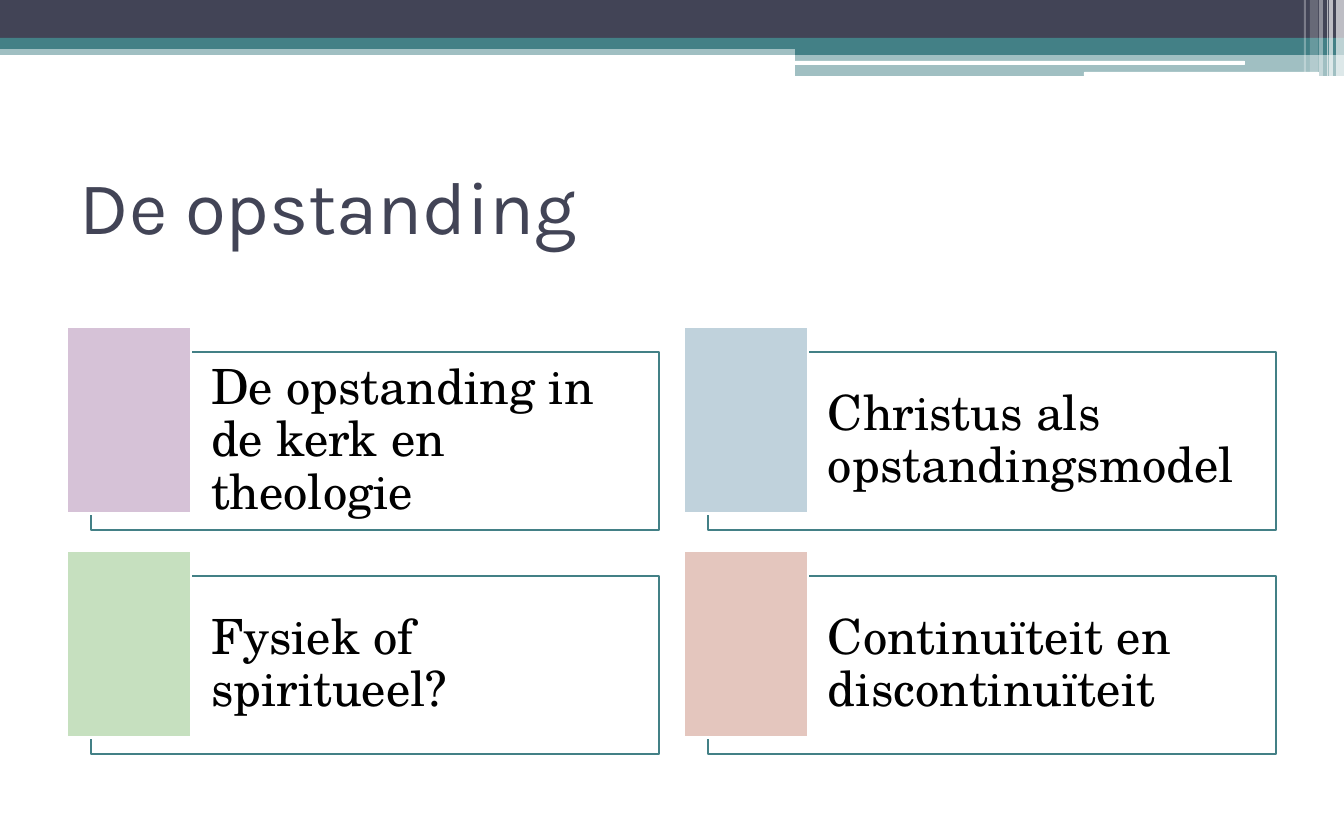
from lxml import etree
from pptx import Presentation
from pptx import util as u
from pptx.dml.color import RGBColor
from pptx.enum import shapes, text
from pptx.oxml.ns import qn

EMU_PER_PX = 914400 / 134.4
WIDTH, HEIGHT = 1344, 840

WHITE = RGBColor(0xFF, 0xFF, 0xFF)
BLACK = RGBColor(0x00, 0x00, 0x00)
NAVY = RGBColor(0x42, 0x44, 0x56)
TEAL = RGBColor(0x43, 0x80, 0x86)
LILAC = RGBColor(0xD6, 0xC2, 0xD7)
BLUE = RGBColor(0xC0, 0xD2, 0xDC)
GREEN = RGBColor(0xC6, 0xE0, 0xBF)
PINK = RGBColor(0xE4, 0xC6, 0xBE)

RECTANGLE = shapes.MSO_SHAPE.RECTANGLE
ROUNDED = shapes.MSO_SHAPE.ROUNDED_RECTANGLE


def px(value):
    return u.Emu(round(value * EMU_PER_PX))


def add_block(slide, box, color, opacity=100, line=None, line_width=0.75, kind=RECTANGLE):
    shape = slide.shapes.add_shape(kind, *map(px, box))
    shape.shadow.inherit = False
    shape.fill.solid()
    shape.fill.fore_color.rgb = color
    if opacity < 100:
        fill_color = shape.fill._xPr.find(qn("a:solidFill"))[0]
        etree.SubElement(fill_color, qn("a:alpha"), val=str(opacity * 1000))
    if line is None:
        shape.line.fill.background()
    else:
        shape.line.color.rgb = line
        shape.line.width = u.Pt(line_width)
    return shape


def write_text(shape, content, font, size, color, insets=(13, 7, 13, 7), line_spacing=1.0):
    frame = shape.text_frame
    frame.word_wrap = True
    frame.vertical_anchor = text.MSO_ANCHOR.MIDDLE
    (frame.margin_left, frame.margin_top,
     frame.margin_right, frame.margin_bottom) = map(px, insets)
    paragraph = frame.paragraphs[0]
    paragraph.alignment = text.PP_ALIGN.LEFT
    paragraph.line_spacing = line_spacing
    run = paragraph.add_run()
    run.text = content
    run.font.name = font
    run.font.size = u.Pt(size)
    run.font.color.rgb = color


def add_header(slide, box):
    left, top, width, height = box
    step = 795  # where the band becomes taller
    # Bands: x, y, width, height, color, opacity
    bands = [
        (0, 44, width, 11, TEAL, 50),
        (0, 0, width, 38, NAVY, 100),
        (0, 38, width, 11, TEAL, 100),
        (step, 44, width - step, 11, TEAL, 100),
        (step, 55, width - step, height - 55, TEAL, 50),
    ]
    # Stripes at the right edge: x, width, height, opacity
    stripes = [(1336, 8, 76, 65), (1329, 4, 76, 65), (1327, 1, 76, 60),
               (1319, 4, 76, 40), (1310, 8, 72, 20), (1304, 2, 72, 30)]
    for x, y, w, h, color, opacity in bands:
        add_block(slide, (left + x, top + y, w, h), color, opacity)
    for x, y, w in [(step, 61, 450), (1084, 72, 235)]:
        add_block(slide, (left + x, top + y, w, 4), WHITE, kind=ROUNDED)
    for x, w, h, opacity in stripes:
        add_block(slide, (left + x, top, w, h), WHITE, opacity)


def add_title(slide, box, content):
    shape = slide.shapes.add_textbox(*map(px, box))
    write_text(shape, content, font="Karla", size=40, color=NAVY)


def add_card(slide, box, content, color):
    left, top, width, height = box
    frame_box = (left + 24, top + 25, width - 24, height - 25)
    frame = add_block(slide, frame_box, WHITE, opacity=40, line=TEAL)
    write_text(frame, content, font="TeX Gyre Schola", size=26, color=BLACK,
               insets=(120, 15, 15, 15), line_spacing=0.9)
    add_block(slide, (left, top, 124, 187), color, line=WHITE, line_width=1.5)


def add_card_grid(slide, box, cards, columns=2, gap_x=25, gap_y=21):
    left, top, width, height = box
    rows = len(cards) // columns
    card_width = (width - gap_x * (columns - 1)) / columns
    card_height = (height - gap_y * (rows - 1)) / rows
    for index, (content, color) in enumerate(cards):
        row, column = divmod(index, columns)
        card_box = (left + column * (card_width + gap_x),
                    top + row * (card_height + gap_y), card_width, card_height)
        add_card(slide, card_box, content, color)


def main():
    presentation = Presentation()
    presentation.slide_width = px(WIDTH)
    presentation.slide_height = px(HEIGHT)
    slide = presentation.slides.add_slide(presentation.slide_layouts[6])

    add_header(slide, (0, 0, WIDTH, 76))
    add_title(slide, (67, 140, 1210, 130), "De opstanding")
    add_card_grid(slide, (67, 327, 1209, 427), [
        ("De opstanding in de kerk en theologie", LILAC),
        ("Christus als opstandingsmodel", BLUE),
        ("Fysiek of spiritueel?", GREEN),
        ("Continuïteit en discontinuïteit", PINK),
    ])
    presentation.save("out.pptx")


if __name__ == "__main__":
    main()
